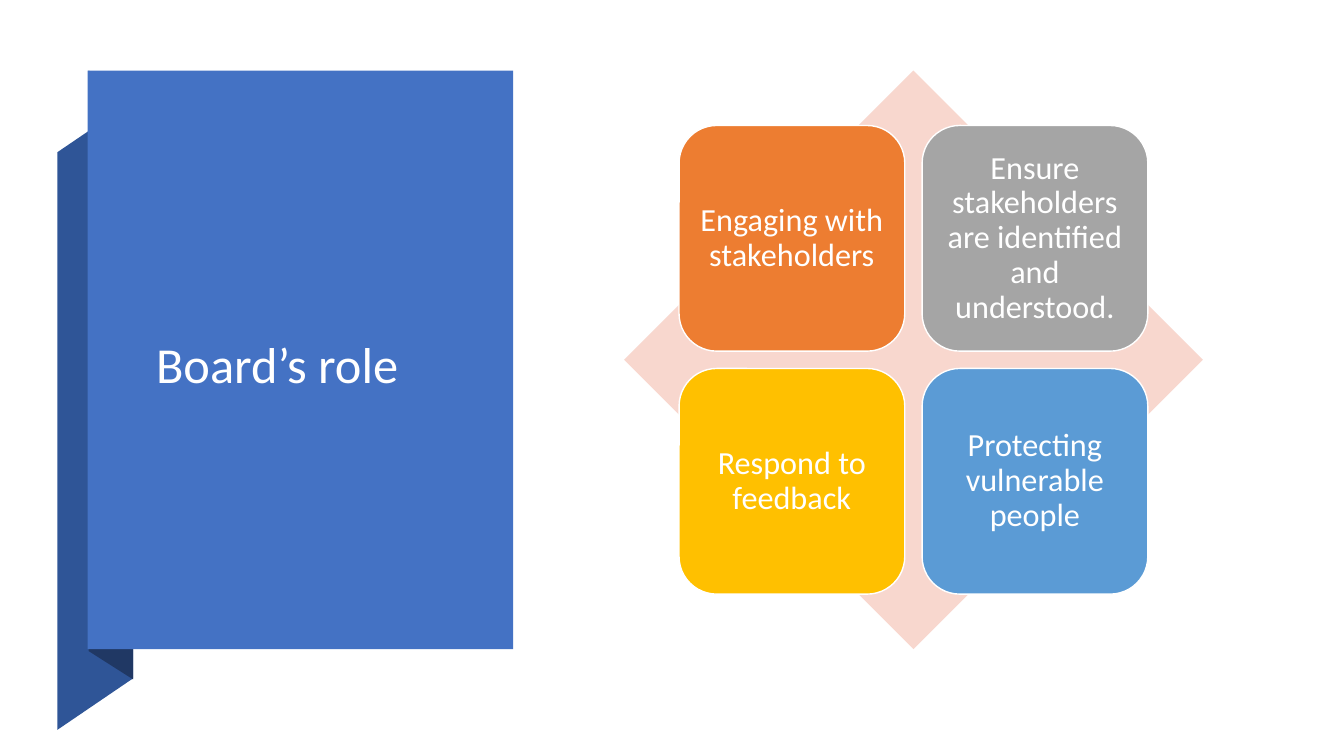
"""Build a slide with a folded title banner and a four-tile matrix on a diamond."""
from dataclasses import dataclass

from pptx import Presentation
from pptx.dml.color import RGBColor
from pptx.enum.shapes import MSO_SHAPE
from pptx.enum.text import MSO_ANCHOR, PP_ALIGN
from pptx.util import Inches, Pt

TITLE = "Board’s role"
TILES = [
    [("Engaging with stakeholders", "ED7D31"),
     ("Ensure stakeholders are identified and understood.", "A5A5A5")],
    [("Respond to feedback", "FFC000"),
     ("Protecting vulnerable people", "5B9BD5")],
]
BANNER = (0.87, 0.7, 4.22, 5.74)
TITLE_BOX = (1.45, 1.67, 3.01, 3.94)
DIAMOND = (6.19, 0.7, 5.74, 5.74)
FOLDS = [
    ([(0.57, 7.24), (1.32, 6.73), (1.32, 1), (0.57, 1.51)], "2F5597"),
    ([(0.88, 6.46), (1.32, 6.74), (1.32, 0.99), (0.88, 0.7)], "203864"),
]
TILE_MARGIN, TILE_SHARE, TILE_PITCH = 0.095, 0.39, 0.42


@dataclass(frozen=True)
class Theme:
    """Colours and type sizes of the slide."""
    font: str = "Calibri"
    light: str = "FFFFFF"
    banner: str = "4472C4"
    diamond: str = "F8D7CE"
    title_size: int = 36
    tile_size: int = 23
    outline: int = 1


THEME = Theme()


def paint(shape, fill, line=None):
    """Give a shape a flat fill and an optional outline."""
    shape.shadow.inherit = False
    shape.fill.solid()
    shape.fill.fore_color.rgb = RGBColor.from_string(fill)
    if line:
        shape.line.color.rgb = RGBColor.from_string(line)
        shape.line.width = Pt(THEME.outline)
    else:
        shape.line.fill.background()


def add_block(slide, kind, box, fill, line=None):
    """Add a painted preset shape."""
    shape = slide.shapes.add_shape(kind, *map(Inches, box))
    paint(shape, fill, line)
    return shape


def write(shape, text, size, alignment, **margins):
    """Set one middle-anchored paragraph in a shape."""
    frame = shape.text_frame
    paragraph = frame.paragraphs[0]
    run = paragraph.add_run()
    run.text = text
    run.font.color.rgb = RGBColor.from_string(THEME.light)
    formats = [
        (frame, {"word_wrap": True, "vertical_anchor": MSO_ANCHOR.MIDDLE, **margins}),
        (paragraph, {"alignment": alignment, "line_spacing": 0.9}),
        (run.font, {"name": THEME.font, "size": Pt(size)}),
    ]
    for target, values in formats:
        for name, value in values.items():
            setattr(target, name, value)


def add_banner(slide):
    """Draw the folds, the banner and its title."""
    for points, colour in FOLDS:
        corners = [(Inches(x), Inches(y)) for x, y in points]
        builder = slide.shapes.build_freeform(*corners[0])
        builder.add_line_segments(corners[1:], close=True)
        paint(builder.convert_to_shape(), colour)
    add_block(slide, MSO_SHAPE.RECTANGLE, BANNER, THEME.banner)
    title = slide.shapes.add_textbox(*map(Inches, TITLE_BOX))
    write(title, TITLE, THEME.title_size, PP_ALIGN.LEFT)


def add_matrix(slide):
    """Draw the diamond and place the tiles as shares of its side."""
    add_block(slide, MSO_SHAPE.DIAMOND, DIAMOND, THEME.diamond)
    left, top, side, _ = DIAMOND
    size = side * TILE_SHARE
    sides = ("left", "top", "right", "bottom")
    margins = {f"margin_{name}": Inches(0.1) for name in sides}
    for row, tiles in enumerate(TILES):
        for column, (text, colour) in enumerate(tiles):
            x = left + side * (TILE_MARGIN + column * TILE_PITCH)
            y = top + side * (TILE_MARGIN + row * TILE_PITCH)
            tile = add_block(slide, MSO_SHAPE.ROUNDED_RECTANGLE,
                             (x, y, size, size), colour, THEME.light)
            write(tile, text, THEME.tile_size, PP_ALIGN.CENTER, **margins)


def main():
    """Create and save the presentation."""
    presentation = Presentation()
    presentation.slide_width = Inches(13.33)
    presentation.slide_height = Inches(7.5)
    slide = presentation.slides.add_slide(presentation.slide_layouts[6])
    add_banner(slide)
    add_matrix(slide)
    presentation.save("out.pptx")


if __name__ == "__main__":
    main()
